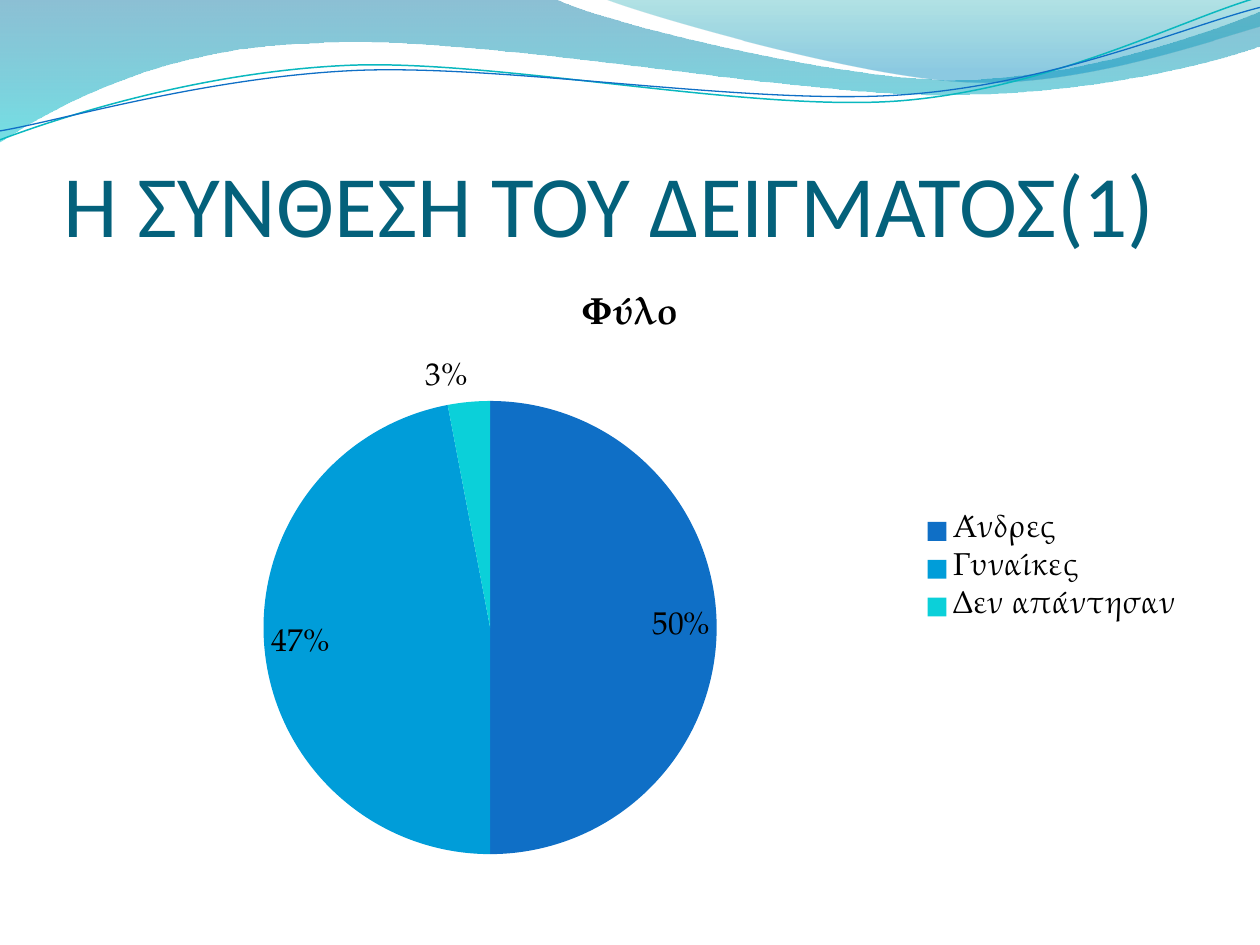
"""Build a slide with a wave header and a pie chart of the sample by gender."""
import pptx
import pptx.chart.data
import pptx.dml.color
import pptx.enum.chart
import pptx.enum.text
import pptx.oxml
import pptx.oxml.ns
import pptx.util

Cm, Pt = pptx.util.Cm, pptx.util.Pt
RGBColor = pptx.dml.color.RGBColor

BLACK = RGBColor(0x00, 0x00, 0x00)
TITLE_TEAL = RGBColor(0x04, 0x61, 0x7B)
BLUE = RGBColor(0x0F, 0x6F, 0xC6)
SKY = RGBColor(0x00, 0x9D, 0xD9)
CYAN = RGBColor(0x0B, 0xD0, 0xD9)
LINE_TEAL = RGBColor(0x0A, 0xB8, 0xBF)
DEEP_BLUE = RGBColor(0x00, 0x74, 0xA1)
AQUA = RGBColor(0x00, 0xC6, 0xCF)
GREEN_TEAL = RGBColor(0x00, 0xA1, 0xA9)
MID_BLUE = RGBColor(0x00, 0x8B, 0xBF)

TITLE = "Η ΣΥΝΘΕΣΗ ΤΟΥ ΔΕΙΓΜΑΤΟΣ(1)"
CHART_TITLE = "Φύλο"
CHART_FONT = "TeX Gyre Pagella"
GENDERS = [("Άνδρες", 0.5, BLUE), ("Γυναίκες", 0.47, SKY), ("Δεν απάντησαν", 0.03, CYAN)]

BANDS = [
    {
        "start": (0, 0),
        "segments": [
            [(11.18, -0.03)],
            [(12.09, 0.43), (16.87, 1.6), (19.25, 1.6)],
            [(21.67, 1.6), (24.33, 0.66), (25.4, 0.23)],
            [(25.43, 0.91)],
            [(24.97, 1.12), (22.1, 1.93), (18.95, 1.91)],
            [(15.8, 1.91), (9.7, 0.71), (6.53, 0.86)],
            [(3.28, 0.91), (1.17, 2.11), (-0.03, 2.87)],
        ],
        "stops": [(0, DEEP_BLUE, 45), (1, AQUA, 55)],
    },
    {
        "start": (12.17, -0.03),
        "segments": [
            [(12.93, 0.28), (17.32, 1.57), (19.53, 1.65)],
            [(21.74, 1.75), (24.41, 0.81), (25.4, 0.53)],
            [(25.4, 0)],
        ],
        "stops": [(0, GREEN_TEAL, 30), (0.8, MID_BLUE, 45)],
    },
]
STRAND_ROTATION = 357.3
STRANDS = [
    {
        "start": (-0.05, 2.22),
        "segments": [
            [(1.19, 1.82), (4.02, 1.04), (7.05, 1.05)],
            [(10.05, 1.07), (15.02, 2.37), (18.08, 2.29)],
            [(21.13, 2.2), (23.87, 0.91), (25.41, 0.55)],
        ],
        "color": LINE_TEAL,
        "width": 0.85,
    },
    {
        "start": (-0.04, 2.04),
        "segments": [
            [(1.16, 1.9), (4.18, 1.15), (7.2, 1.16)],
            [(10.25, 1.18), (15.13, 2.25), (18.18, 2.17)],
            [(21.21, 2.1), (23.93, 1.06), (25.45, 0.75)],
        ],
        "color": BLUE,
        "width": 0.75,
    },
]


def set_all(target, values):
    for name, value in values.items():
        setattr(target, name, value)


def new_element(tag, attributes=""):
    return pptx.oxml.parse_xml(f'<{tag} {pptx.oxml.ns.nsdecls("a")} {attributes}/>')


def add_wave(slide, wave, close):
    points = [wave["start"], *(point for segment in wave["segments"] for point in segment)]
    start, *rest = [(Cm(x), Cm(y)) for x, y in points]
    builder = slide.shapes.build_freeform(*start)
    builder.add_line_segments(rest, close=close)
    shape = builder.convert_to_shape()
    shape.shadow.inherit = False
    sides = iter(list(shape.element.spPr.iter(pptx.oxml.ns.qn("a:lnTo"))))
    for segment in wave["segments"]:
        controls = [next(sides) for _ in segment]
        if len(controls) == 3:
            curve = new_element("a:cubicBezTo")
            controls[0].addprevious(curve)
            for control in controls:
                curve.append(control[0])
                control.getparent().remove(control)
    return shape


def add_band(slide, band):
    shape = add_wave(slide, band, True)
    shape.line.fill.background()
    shape.fill.gradient()
    shape.fill.gradient_angle = 270
    for stop, (position, color, _) in zip(shape.fill.gradient_stops, band["stops"]):
        stop.position = position
        stop.color.rgb = color
    colors = shape.element.spPr.iter(pptx.oxml.ns.qn("a:srgbClr"))
    for color, (_, _, opacity) in zip(colors, band["stops"]):
        color.append(new_element("a:alpha", f'val="{opacity * 1000}"'))
    return shape


def add_strand(slide, strand):
    shape = add_wave(slide, strand, False)
    shape.rotation = STRAND_ROTATION
    shape.fill.background()
    shape.line.color.rgb = strand["color"]
    shape.line.width = Pt(strand["width"])
    return shape


def add_title(slide):
    title = slide.shapes.title
    set_all(title, {"left": Cm(1.27), "top": Cm(1.96), "width": Cm(22.86), "height": Cm(3.18)})
    frame = title.text_frame
    frame.text = TITLE
    set_all(frame, {
        "margin_left": 0, "margin_top": Cm(0.13), "margin_right": 0, "margin_bottom": 0,
        "vertical_anchor": pptx.enum.text.MSO_ANCHOR.BOTTOM,
        "auto_size": pptx.enum.text.MSO_AUTO_SIZE.NONE, "word_wrap": True,
    })
    heading = frame.paragraphs[0]
    heading.alignment = pptx.enum.text.PP_ALIGN.LEFT
    set_all(heading.runs[0].font, {"name": "Calibri", "size": Pt(50)})
    heading.runs[0].font.color.rgb = TITLE_TEAL


def add_gender_chart(slide):
    genders = pptx.chart.data.CategoryChartData(number_format="0%")
    genders.categories = [name for name, _, _ in GENDERS]
    genders.add_series(CHART_TITLE, [share for _, share, _ in GENDERS])
    chart = slide.shapes.add_chart(
        pptx.enum.chart.XL_CHART_TYPE.PIE, Cm(1.27), Cm(5.38), Cm(22.86), Cm(12.19), genders
    ).chart
    set_all(chart.font, {"name": CHART_FONT, "size": Pt(18)})
    chart.font.color.rgb = BLACK
    set_all(chart, {"has_title": True, "has_legend": True})
    chart.chart_title.text_frame.text = CHART_TITLE
    heading = chart.chart_title.text_frame.paragraphs[0].runs[0].font
    set_all(heading, {"name": CHART_FONT, "size": Pt(21.6), "bold": True})
    heading.color.rgb = BLACK
    set_all(chart.legend, {
        "position": pptx.enum.chart.XL_LEGEND_POSITION.RIGHT, "include_in_layout": False,
    })
    pie = chart.plots[0]
    set_all(pie, {"vary_by_categories": True, "has_data_labels": True})
    set_all(pie.data_labels, {
        "show_value": True, "show_percentage": False,
        "number_format": "0%", "number_format_is_linked": False,
        "position": pptx.enum.chart.XL_LABEL_POSITION.BEST_FIT,
    })
    for index, (_, _, color) in enumerate(GENDERS):
        fill = pie.series[0].points[index].format.fill
        fill.solid()
        fill.fore_color.rgb = color


def main():
    deck = pptx.Presentation()
    set_all(deck, {"slide_width": Cm(25.4), "slide_height": Cm(19.05)})
    slide = deck.slides.add_slide(deck.slide_layouts[5])
    waves = [add_band(slide, band) for band in BANDS]
    waves += [add_strand(slide, strand) for strand in STRANDS]
    for wave in waves:
        slide.shapes.title.element.addprevious(wave.element)
    add_title(slide)
    add_gender_chart(slide)
    deck.save("out.pptx")


if __name__ == "__main__":
    main()
